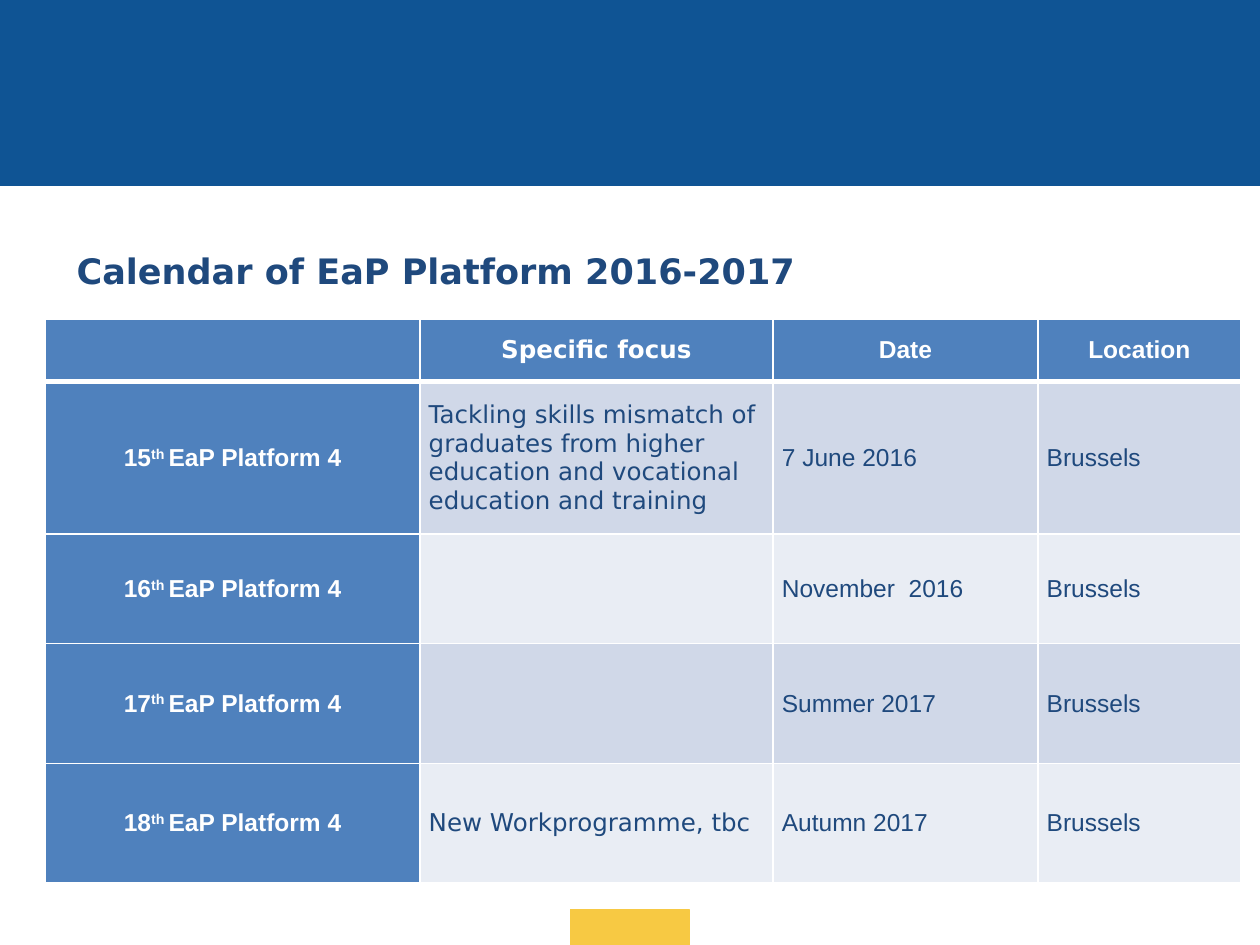
from lxml.etree import SubElement
from pptx import Presentation
from pptx.dml.color import RGBColor
from pptx.enum.shapes import MSO_SHAPE as Preset
from pptx.enum.text import MSO_ANCHOR as Anchor, PP_ALIGN as Align
from pptx.oxml.ns import qn
from pptx.util import Inches, Pt

WIDTH, HEIGHT = Inches(10), Inches(7.5)
NAVY, WHITE, HEADER = "1F497D", "FFFFFF", "4F81BD"
BANDS = ["D0D8E8", "E9EDF4"]
BODY, ACCENT = "Arial", "DejaVu Sans"
COLUMNS = [2.97, 2.8, 2.1, 1.61]
ROWS = [0.5, 1.21, 0.87, 0.95, 0.95]
HEADINGS = ["", "Specific focus", "Date", "Location"]
MEETINGS = [
    ("15", "Tackling skills mismatch of graduates from higher education "
           "and vocational education and training", "7 June 2016"),
    ("16", "", "November  2016"),
    ("17", "", "Summer 2017"),
    ("18", "New Workprogramme, tbc", "Autumn 2017"),
]


def color(code):
    return RGBColor.from_string(code)


def place(left, top, width, height):
    return [int(WIDTH * left), int(HEIGHT * top), int(WIDTH * width), int(HEIGHT * height)]


def style(para, size, face, ink, bold):
    font = para.font
    font.size, font.name, font.bold = Pt(size), face, bold
    font.color.rgb = color(ink)


def add_block(page, box, fill):
    block = page.shapes.add_shape(Preset.RECTANGLE, *box)
    block.shadow.inherit = False
    block.fill.solid()
    block.fill.fore_color.rgb = color(fill)
    block.line.color.rgb = color(fill)
    block.line.width = Pt(0.75)


def add_title(page, box, text):
    frame = page.shapes.add_textbox(*box).text_frame
    frame.word_wrap = True
    frame.vertical_anchor = Anchor.TOP
    frame.margin_top = Inches(0.04)
    para = frame.paragraphs[0]
    para.text = text
    style(para, 20, ACCENT, NAVY, True)


def add_borders(cell, widths):
    for side, width in zip("LRTB", widths):
        line = SubElement(cell._tc.get_or_add_tcPr(), qn(f"a:ln{side}"), w=str(Pt(width)))
        SubElement(SubElement(line, qn("a:solidFill")), qn("a:srgbClr"), val=WHITE)


def format_cell(cell, row, column):
    heading = row == 0 or column == 0
    add_borders(cell, (1, 1, 3 if row == 1 else 1, 3 if row == 0 else 1))
    cell.fill.solid()
    cell.fill.fore_color.rgb = color(HEADER if heading else BANDS[(row - 1) % 2])
    cell.vertical_anchor = Anchor.MIDDLE
    cell.margin_left = cell.margin_right = Inches(0.07)
    cell.margin_top = cell.margin_bottom = 0
    para = cell.text_frame.paragraphs[0]
    para.alignment = Align.CENTER if heading else Align.LEFT
    style(para, 14, ACCENT if column == 1 else BODY, WHITE if heading else NAVY, heading)


def write_meeting(para, number):
    for text, baseline in ((number, 0), ("th ", 30000), ("EaP Platform 4", 0)):
        span = para.add_run()
        span.text = text
        if baseline:
            span._r.get_or_add_rPr().set("baseline", str(baseline))


def add_calendar(page, box):
    table = page.shapes.add_table(len(ROWS), len(COLUMNS), *box).table
    for column, share in zip(table.columns, COLUMNS):
        column.width = int(box[2] * share / sum(COLUMNS))
    for row, share in zip(table.rows, ROWS):
        row.height = int(box[3] * share / sum(ROWS))
    entries = [HEADINGS] + [[*meeting, "Brussels"] for meeting in MEETINGS]
    for row, values in enumerate(entries):
        for column, text in enumerate(values):
            cell = table.cell(row, column)
            if row and column == 0:
                write_meeting(cell.text_frame.paragraphs[0], text)
            elif text:
                cell.text = text
            format_cell(cell, row, column)


def main():
    deck = Presentation()
    deck.slide_width, deck.slide_height = WIDTH, HEIGHT
    page = deck.slides.add_slide(deck.slide_layouts[6])
    add_block(page, place(0.453, 7.22 / 7.5, 0.094, 0.28 / 7.5), "F7C943")
    add_block(page, place(0, 0, 1, 1.47 / 7.5), "0F5494")
    add_title(page, place(0.051, 1.94 / 7.5, 0.9, 0.73 / 7.5),
              "Calendar of EaP Platform 2016-2017")
    add_calendar(page, place(0.036, 2.53 / 7.5, 0.949, 4.48 / 7.5))
    deck.save("out.pptx")


if __name__ == "__main__":
    main()
